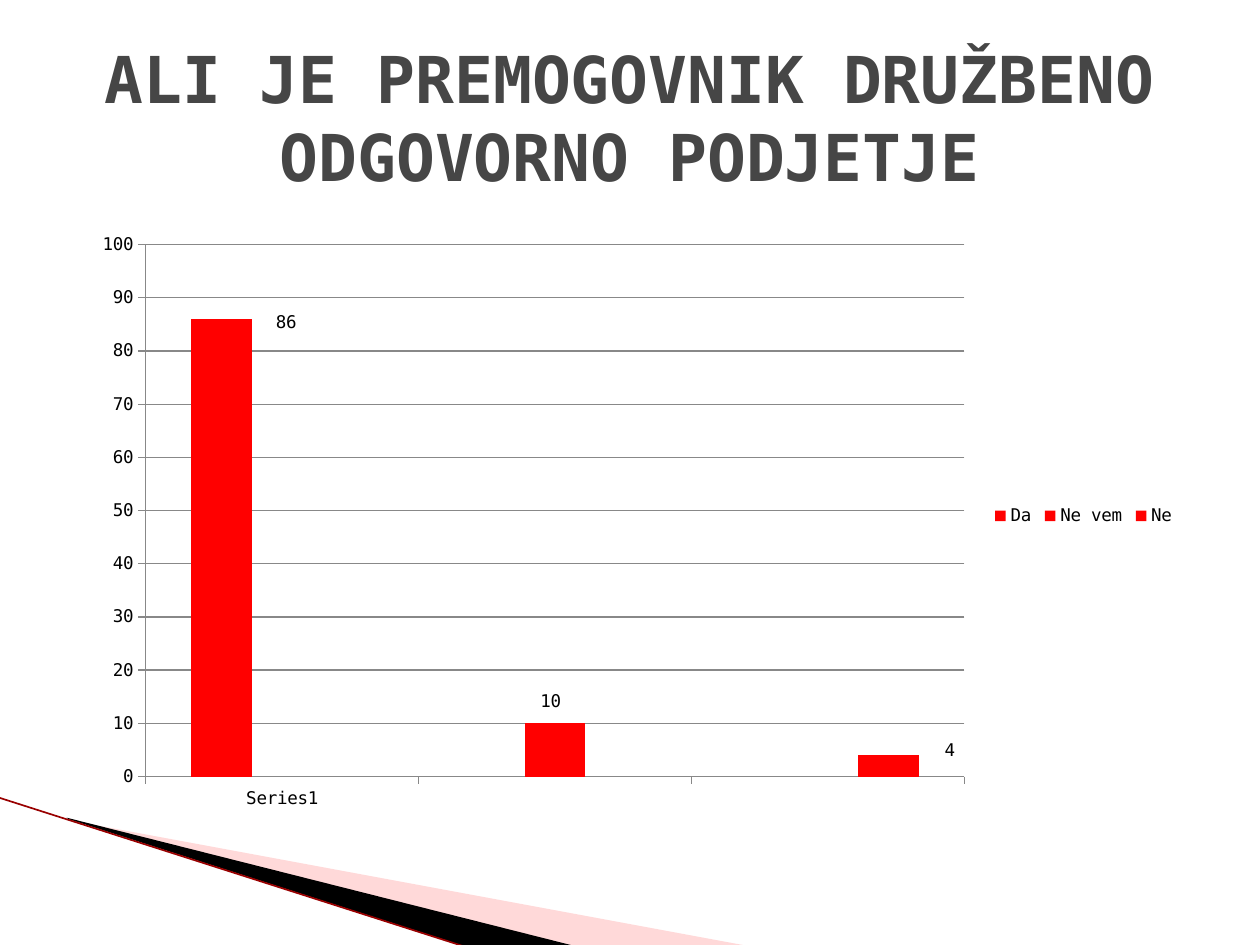
from typing import NamedTuple

from lxml import etree
from pptx import Presentation
from pptx.chart.data import CategoryChartData
from pptx.dml.color import RGBColor
from pptx.enum.chart import (XL_CHART_TYPE, XL_LABEL_POSITION,
                             XL_LEGEND_POSITION, XL_TICK_LABEL_POSITION,
                             XL_TICK_MARK)
from pptx.enum.shapes import MSO_CONNECTOR
from pptx.enum.text import MSO_ANCHOR, MSO_AUTO_SIZE, PP_ALIGN
from pptx.oxml.ns import qn
from pptx.util import Inches, Pt

COLUMNS = XL_CHART_TYPE.COLUMN_CLUSTERED
OUTSIDE_END = XL_LABEL_POSITION.OUTSIDE_END
RIGHT = XL_LEGEND_POSITION.RIGHT
LOW = XL_TICK_LABEL_POSITION.LOW
OUTSIDE = XL_TICK_MARK.OUTSIDE
STRAIGHT = MSO_CONNECTOR.STRAIGHT
MIDDLE = MSO_ANCHOR.MIDDLE
NO_FIT = MSO_AUTO_SIZE.NONE
CENTER = PP_ALIGN.CENTER

FONT = "DejaVu Sans Mono"
COLORS = {"title": "464646", "text": "000000", "bar": "FF0000",
          "axis": "888888", "pink": "FFA2A2", "black": "000000",
          "edge": "990000"}
NO_LEADERS = (
    '<c:extLst xmlns:c="http://schemas.openxmlformats.org/drawingml/2006/chart">'
    '<c:ext uri="{CE6537A1-D6FC-4f65-9D91-7224C49458BB}" '
    'xmlns:c15="http://schemas.microsoft.com/office/drawing/2012/chart">'
    '<c15:showLeaderLines val="0"/></c:ext></c:extLst>')


class Wedge(NamedTuple):
    frame: tuple[float, float, float, float]
    points: list[tuple[float, float]]
    color: str
    opacity: int = 100


class Answer(NamedTuple):
    name: str
    value: int
    label_dx: float  # percent of the chart
    label_dy: float


WEDGES = [
    Wedge((0.78, 5.47, 4.16, 1.58),
          [(0.55, 6.51), (5.95, 7.51), (4.56, 7.51), (0.55, 6.5)], "pink", 40),
    Wedge((-0.06, 6.33, 4.16, 0.92),
          [(0.53, 6.49), (4.57, 7.51), (3.72, 7.52), (0.54, 6.5)], "black"),
]
ANSWERS = [Answer("Da", 86, 5.7, 2.9),
           Answer("Ne vem", 10, -0.4, -1.2),
           Answer("Ne", 4, 5.4, 1.6)]


def rgb(name: str) -> RGBColor:
    return RGBColor.from_string(COLORS[name])


def format_font(font, size: float, color: str, bold: bool = False) -> None:
    font.name, font.size, font.bold = FONT, Pt(size), bold
    font.color.rgb = rgb(color)


def write_text(tf, text: str, *, size: float, color: str,
               bold: bool = False, align=CENTER) -> None:
    p = tf.paragraphs[0]
    p.alignment = align
    r = p.add_run()
    r.text = text
    format_font(r.font, size, color, bold)


def set_frame(sp, frame: tuple[float, float, float, float]) -> None:
    """Give a freeform its frame; the outline stays and may reach outside."""
    left, top, width, height = map(Inches, frame)
    outline = sp._element.find(".//" + qn("a:pathLst"))[0]
    for pt in outline.iter(qn("a:pt")):
        pt.set("x", str(int(pt.get("x")) + sp.left - left))
        pt.set("y", str(int(pt.get("y")) + sp.top - top))
    outline.set("w", str(width))
    outline.set("h", str(height))
    sp.left, sp.top, sp.width, sp.height = left, top, width, height


def draw_wedge(s, wedge: Wedge) -> None:
    start, *rest = [(Inches(x), Inches(y)) for x, y in wedge.points]
    builder = s.shapes.build_freeform(*start)
    builder.add_line_segments(rest, close=True)
    sp = builder.convert_to_shape()
    set_frame(sp, wedge.frame)
    sp.shadow.inherit = False
    sp.fill.solid()
    sp.fill.fore_color.rgb = rgb(wedge.color)
    sp.line.fill.background()
    if wedge.opacity < 100:
        clr = sp.fill._xPr.find(".//" + qn("a:srgbClr"))
        etree.SubElement(clr, qn("a:alpha"), val=str(wedge.opacity * 1000))


def draw_edge(s) -> None:
    line = s.shapes.add_connector(STRAIGHT, Inches(-0.01), Inches(6.33),
                                  Inches(3.71), Inches(7.52))
    line.line.color.rgb = rgb("edge")
    line.line.width = Pt(0.95)
    etree.SubElement(line._element.spPr, qn("a:effectLst"))


def manual_layout(modes: dict[str, str], **percent: float) -> etree._Element:
    layout = etree.Element(qn("c:layout"))
    manual = etree.SubElement(layout, qn("c:manualLayout"))
    shares = {tag: round(value / 100, 4) for tag, value in percent.items()}
    for tag, value in {**modes, **shares}.items():
        etree.SubElement(manual, qn(f"c:{tag}"), val=str(value))
    return layout


def edge_layout(x: float, y: float, w: float, h: float,
                **target: str) -> etree._Element:
    return manual_layout({**target, "xMode": "edge", "yMode": "edge"},
                         x=x, y=y, w=w, h=h)


def format_axis(axis) -> None:
    axis.major_tick_mark = OUTSIDE
    axis.format.line.color.rgb = rgb("axis")
    axis.format.line.width = Pt(0.75)


def format_answer(series, index: int, answer: Answer) -> None:
    series.format.fill.solid()
    series.format.fill.fore_color.rgb = rgb("bar")
    series.invert_if_negative = False
    series.points[index].data_label.position = OUTSIDE_END
    labels = series._element.find(qn("c:dLbls"))
    idx = labels.find(qn("c:dLbl")).find(qn("c:idx"))
    idx.addnext(manual_layout({}, x=answer.label_dx, y=answer.label_dy))
    for leaders in labels.findall(qn("c:showLeaderLines")):
        leaders.set("val", "0")
    labels.append(etree.fromstring(NO_LEADERS))


def draw_chart(s) -> None:
    data = CategoryChartData()
    data.categories = ["Series1", "", ""]
    for i, answer in enumerate(ANSWERS):
        data.add_series(answer.name, [answer.value if i == j else None
                                      for j in range(len(ANSWERS))])
    chart = s.shapes.add_chart(COLUMNS, Inches(0.5), Inches(1.62), Inches(9),
                               Inches(4.95), data).chart
    chart.has_title = False
    format_font(chart.font, 10, "text")

    # Plot and answers
    plot = chart.plots[0]
    plot.gap_width, plot.overlap, plot.vary_by_categories = 150, 0, False
    for i, (series, answer) in enumerate(zip(plot.series, ANSWERS)):
        format_answer(series, i, answer)
    area = chart._chartSpace.chart.plotArea
    for old in area.findall(qn("c:layout")):
        area.remove(old)
    area.insert(0, edge_layout(7.3, 6.5, 72.2, 85.3, layoutTarget="inner"))

    # Axes
    for axis in (chart.category_axis, chart.value_axis):
        format_axis(axis)
    chart.category_axis.tick_label_position = LOW
    value_axis = chart.value_axis
    value_axis.minimum_scale, value_axis.maximum_scale = 0, 100
    value_axis.major_unit = 10
    grid = value_axis.major_gridlines.format.line
    grid.color.rgb, grid.width = rgb("axis"), Pt(0.75)

    # Legend in one row
    chart.has_legend = True
    legend = chart.legend
    legend.position, legend.include_in_layout = RIGHT, False
    for old in legend._element.findall(qn("c:layout")):
        legend._element.remove(old)
    legend._element.find(qn("c:legendPos")).addnext(
        edge_layout(81.5, 47.5, 17, 5))


def main() -> None:
    prs = Presentation()
    prs.slide_width, prs.slide_height = Inches(10), Inches(7.5)
    s = prs.slides.add_slide(prs.slide_layouts[5])

    # Title
    title = s.shapes.title
    title.left, title.top = Inches(0.5), Inches(0.3)
    title.width, title.height = Inches(9), Inches(1.25)
    tf = title.text_frame
    tf.word_wrap, tf.auto_size, tf.vertical_anchor = True, NO_FIT, MIDDLE
    write_text(tf, "ALI JE PREMOGOVNIK DRUŽBENO ODGOVORNO PODJETJE",
               size=36.9, color="title", bold=True)

    # Corner decoration
    for wedge in WEDGES:
        draw_wedge(s, wedge)
    draw_edge(s)

    # Survey results
    draw_chart(s)
    prs.save("out.pptx")


if __name__ == "__main__":
    main()
